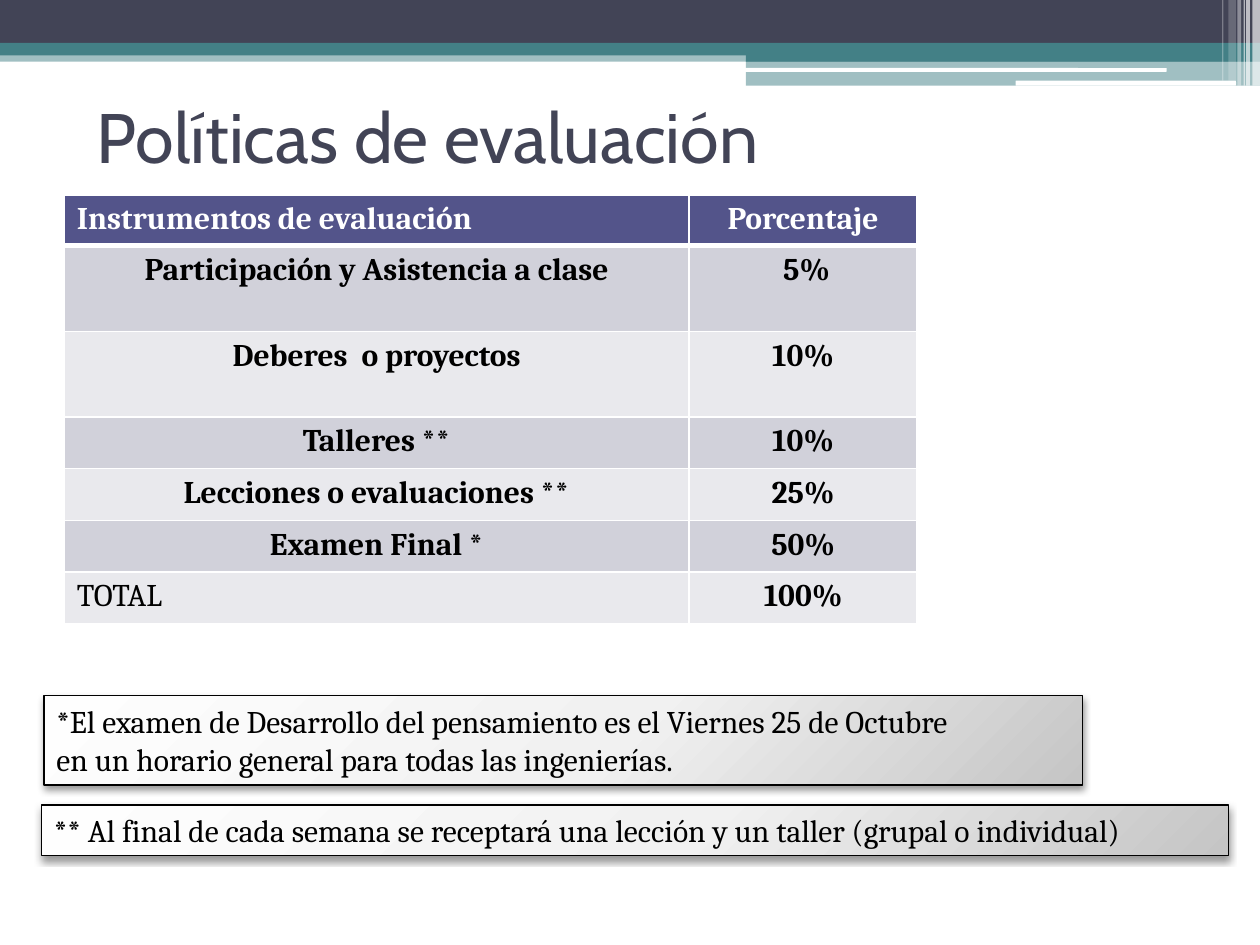
"""Build the slide with the evaluation policies of the course."""
import dataclasses

import pptx
import pptx.dml.color
import pptx.enum.shapes
import pptx.enum.text
import pptx.oxml
import pptx.oxml.ns
import pptx.util

Inches = pptx.util.Inches
Pt = pptx.util.Pt
MSO_SHAPE = pptx.enum.shapes.MSO_SHAPE
PP_ALIGN = pptx.enum.text.PP_ALIGN
MSO_ANCHOR = pptx.enum.text.MSO_ANCHOR


@dataclasses.dataclass(frozen=True)
class Theme:
    ink: str = "424456"
    teal: str = "438086"
    white: str = "FFFFFF"
    black: str = "000000"
    header: str = "53548A"
    bands: tuple = ("D1D1DA", "E9E9ED")
    note_stops: tuple = ((0, "FEFEFE"), (55, "F1F1F1"), (100, "C5C5C5"))
    title_font: str = "Cabin"
    body_font: str = "Cambria"
    title_size: int = 40
    body_size: int = 18


def rgb(color):
    return pptx.dml.color.RGBColor.from_string(color)


def drawing_xml(tag, attributes, content):
    namespace = pptx.oxml.ns.nsdecls("a")
    return pptx.oxml.parse_xml(f"<a:{tag} {namespace} {attributes}>{content}</a:{tag}>")


class SlideBuilder:
    def __init__(self, slide, theme):
        self.slide = slide
        self.theme = theme

    def set_text(self, frame, lines, font, size, color, bold=False, align=PP_ALIGN.LEFT):
        frame.text = "\n".join(lines)
        for paragraph in frame.paragraphs:
            paragraph.alignment = align
            for run in paragraph.runs:
                run.font.name = font
                run.font.size = Pt(size)
                run.font.bold = bold
                run.font.color.rgb = rgb(color)

    def shape(self, kind, box):
        shape = self.slide.shapes.add_shape(kind, *map(Inches, box))
        shape.shadow.inherit = False
        return shape

    def bar(self, box, color, opacity=100, kind=MSO_SHAPE.RECTANGLE):
        bar = self.shape(kind, box)
        bar.fill.solid()
        bar.fill.fore_color.rgb = rgb(color)
        bar.line.fill.background()
        if opacity < 100:
            tint = bar._element.spPr.find(".//" + pptx.oxml.ns.qn("a:srgbClr"))
            tint.append(drawing_xml("alpha", f'val="{opacity * 1000}"', ""))

    def title(self, box, text):
        title = self.slide.shapes.add_textbox(*map(Inches, box))
        title.text_frame.word_wrap = True
        title.text_frame.vertical_anchor = MSO_ANCHOR.MIDDLE
        theme = self.theme
        self.set_text(title.text_frame, [text], theme.title_font, theme.title_size, theme.ink)

    def border(self, cell, is_header):
        for index, side in enumerate("LRTB"):
            width = 3 if is_header and side == "B" else 1
            color = f'<a:solidFill><a:srgbClr val="{self.theme.white}"/></a:solidFill>'
            edge = drawing_xml(f"ln{side}", f'w="{Pt(width)}"', color)
            cell._tc.get_or_add_tcPr().insert(index, edge)

    def table(self, left, top, widths, heights, rows):
        theme = self.theme
        table = self.slide.shapes.add_table(
            len(rows), len(widths), Inches(left), Inches(top),
            Inches(sum(widths)), Inches(sum(heights))).table
        for column, width in zip(table.columns, widths):
            column.width = Inches(width)
        last = len(rows) - 1
        for r, (row, height) in enumerate(zip(rows, heights)):
            table.rows[r].height = Inches(height)
            for c, text in enumerate(row):
                cell = table.cell(r, c)
                cell.fill.solid()
                cell.fill.fore_color.rgb = rgb(theme.bands[(r - 1) % 2] if r else theme.header)
                self.border(cell, r == 0)
                label_at_edge = c == 0 and r in (0, last)
                self.set_text(cell.text_frame, [text], theme.body_font, theme.body_size,
                              theme.black if r else theme.white,
                              bold=(r, c) != (last, 0),
                              align=PP_ALIGN.LEFT if label_at_edge else PP_ALIGN.CENTER)

    def note(self, box, lines):
        theme = self.theme
        note = self.shape(MSO_SHAPE.RECTANGLE, box)
        note.line.color.rgb = rgb(theme.black)
        note.line.width = Pt(0.75)
        stops = "".join(f'<a:gs pos="{position * 1000}"><a:srgbClr val="{color}"/></a:gs>'
                        for position, color in theme.note_stops)
        gradient = drawing_xml(
            "gradFill", 'rotWithShape="1"',
            f'<a:gsLst>{stops}</a:gsLst><a:path path="circle">'
            '<a:fillToRect l="-40000" t="-90000" r="140000" b="190000"/></a:path>')
        properties = note._element.spPr
        properties.insert(2, gradient)
        properties.find(pptx.oxml.ns.qn("a:effectLst")).append(drawing_xml(
            "outerShdw",
            f'blurRad="{Pt(4.1)}" dist="{Pt(2)}" dir="5400000" rotWithShape="0"',
            f'<a:srgbClr val="{theme.black}"><a:alpha val="40000"/></a:srgbClr>'))
        note.text_frame.word_wrap = True
        note.text_frame.vertical_anchor = MSO_ANCHOR.TOP
        self.set_text(note.text_frame, lines, theme.body_font, theme.body_size, theme.black)


def main():
    presentation = pptx.Presentation()
    presentation.slide_width = Inches(10)
    presentation.slide_height = Inches(7.5)
    theme = Theme()
    slide = presentation.slides.add_slide(presentation.slide_layouts[6])
    builder = SlideBuilder(slide, theme)

    for box, color, opacity in (
            ((0, 0.4, 10, 0.09), theme.teal, 50),
            ((0, 0, 10, 0.34), theme.ink, 100),
            ((0, 0.34, 10, 0.1), theme.teal, 100),
            ((5.92, 0.39, 4.08, 0.1), theme.teal, 100),
            ((5.92, 0.48, 4.08, 0.2), theme.teal, 50)):
        builder.bar(box, color, opacity)
    for box in ((5.91, 0.54, 3.35, 0.03), (8.06, 0.64, 1.75, 0.04)):
        builder.bar(box, theme.white, kind=MSO_SHAPE.ROUNDED_RECTANGLE)
    for left, width, height, opacity in (
            (9.94, 0.06, 0.68, 65), (9.89, 0.03, 0.68, 65), (9.87, 0.01, 0.68, 60),
            (9.82, 0.03, 0.68, 40), (9.75, 0.06, 0.64, 20), (9.7, 0.01, 0.64, 30)):
        builder.bar((left, 0, width, height), theme.white, opacity)

    builder.title((0.67, 0.68, 9, 0.79), "Políticas de evaluación")
    builder.table(0.51, 1.55, (4.96, 1.81), (0.4, 0.68, 0.68, 0.41, 0.41, 0.41, 0.41), (
        ("Instrumentos de evaluación", "Porcentaje"),
        ("Participación y Asistencia a clase", " 5%"),
        ("Deberes  o proyectos", "10%"),
        ("Talleres **", "10%"),
        ("Lecciones o evaluaciones **", "25%"),
        ("Examen Final *", "50%"),
        ("TOTAL", "100%")))
    builder.note((0.35, 5.52, 8.24, 0.71), (
        "*El examen de Desarrollo del pensamiento es el Viernes 25 de Octubre",
        "en un horario general para todas las ingenierías."))
    builder.note((0.33, 6.39, 9.42, 0.4), (
        "** Al final de cada semana se receptará una lección y un taller (grupal o individual)",))
    presentation.save("out.pptx")


if __name__ == "__main__":
    main()
